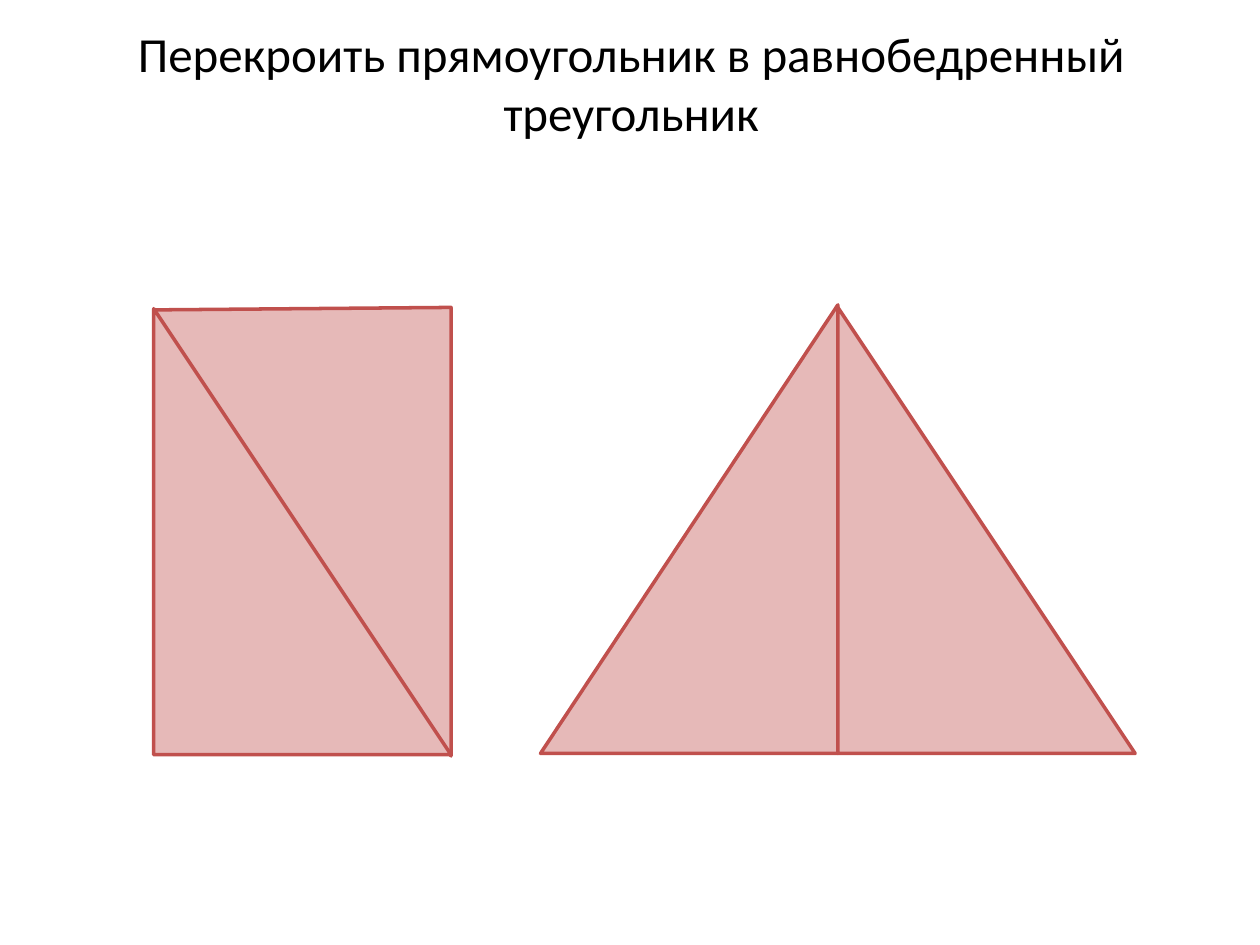
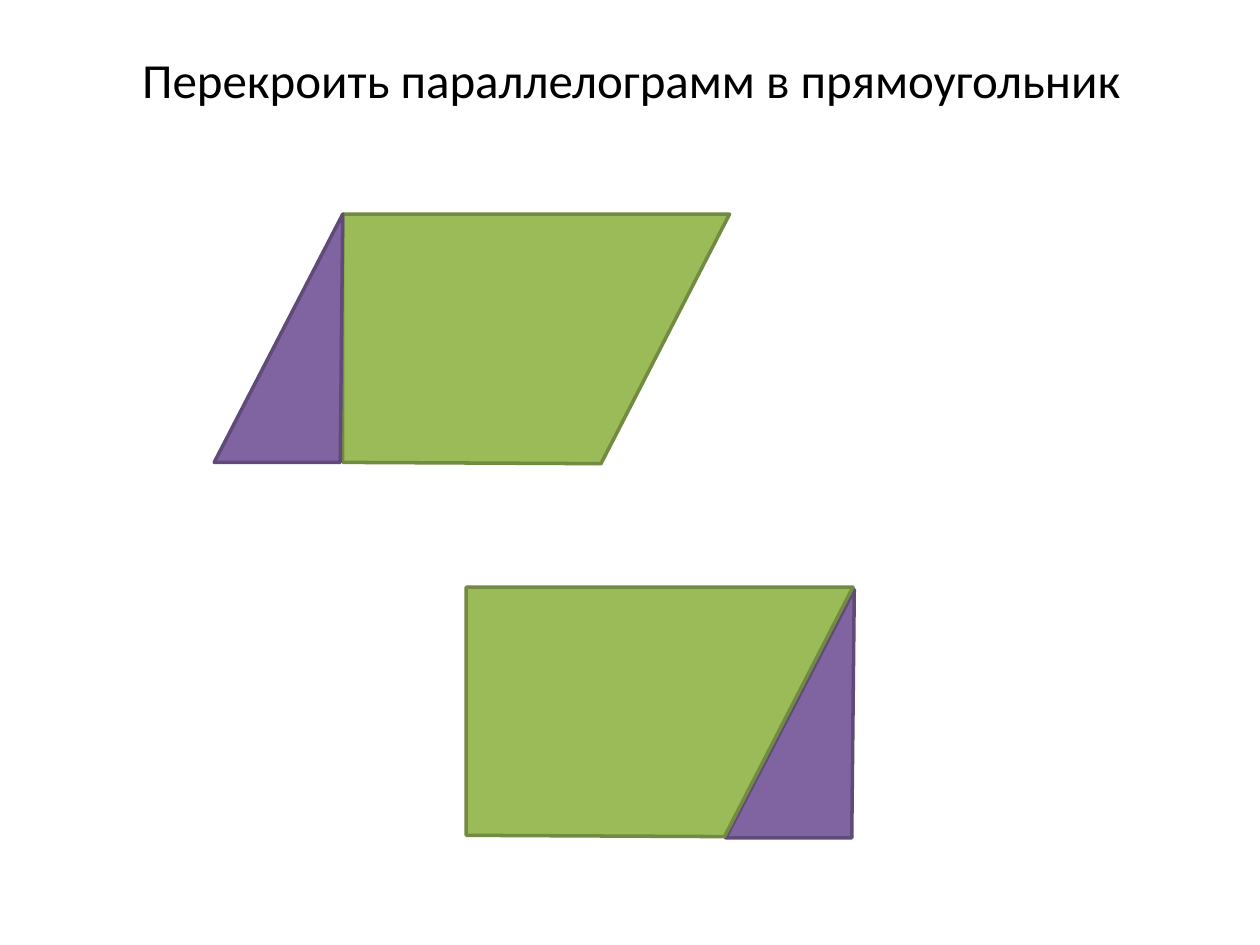
"""Build two slides on cutting and rearranging plane figures."""
from pptx import Presentation
from pptx.dml.color import RGBColor
from pptx.enum.shapes import MSO_SHAPE as Preset
from pptx.enum.text import MSO_ANCHOR as Anchor, PP_ALIGN as Align
from pptx.util import Inches, Pt

COLORS = {
    "text": "000000",
    "pink": "E6B9B8", "pink_line": "C0504D",
    "green": "9BBB59", "green_line": "738A42",
    "purple": "8064A2", "purple_line": "5F4A78",
}


def paint(shape, color):
    shape.shadow.inherit = False
    shape.fill.solid()
    shape.fill.fore_color.rgb = RGBColor.from_string(COLORS[color])
    shape.line.color.rgb = RGBColor.from_string(COLORS[color + "_line"])
    shape.line.width = Pt(2)


def add_piece(page, left, top, outline, color):
    points = [(Inches(left + x), Inches(top + y)) for x, y in outline]
    builder = page.shapes.build_freeform(*points[0], scale=1.0)
    builder.add_line_segments(points[1:], close=True)
    paint(builder.convert_to_shape(), color)


deck = Presentation()
deck.slide_width, deck.slide_height = Inches(10), Inches(7.5)

pages = []
for heading, title_top in [
    ("Перекроить прямоугольник в равнобедренный треугольник", 0.03),
    ("Перекроить параллелограмм в прямоугольник", 0),
]:
    page = deck.slides.add_slide(deck.slide_layouts[5])
    title = page.shapes.title
    title.left, title.top = Inches(0.51), Inches(title_top)
    title.width, title.height = Inches(9), Inches(1.25)
    title.text_frame.text = heading
    title.text_frame.vertical_anchor = Anchor.MIDDLE
    para = title.text_frame.paragraphs[0]
    para.alignment = Align.CENTER
    para.font.name, para.font.size = "Calibri", Pt(28)
    para.font.color.rgb = RGBColor.from_string(COLORS["text"])
    pages.append(page)

triangle_page, rectangle_page = pages

left_half = [(0, 3.56), (2.36, 0), (2.36, 3.56)]
upper_half = [(0, 0.02), (2.36, 0), (2.36, 3.56)]
for piece_left, piece_top, outline, right_left, right_top in [
    (4.29, 2.42, left_half, 6.65, 2.44),
    (1.22, 2.44, upper_half, 1.22, 2.45),
]:
    add_piece(triangle_page, piece_left, piece_top, outline, "pink")
    right_triangle = triangle_page.shapes.add_shape(
        Preset.RIGHT_TRIANGLE, Inches(right_left), Inches(right_top),
        Inches(2.36), Inches(3.54))
    paint(right_triangle, "pink")

trapezoid = [(0, 0), (3.07, 0), (2.05, 1.98), (0, 1.97)]
cut_triangle = [(0, 1.97), (1.02, 0), (1, 1.97)]
for left, top, outline, color in [
    (2.72, 1.7, trapezoid, "green"),
    (1.7, 1.7, cut_triangle, "purple"),
    (5.76, 4.68, cut_triangle, "purple"),
    (3.7, 4.66, trapezoid, "green"),
]:
    add_piece(rectangle_page, left, top, outline, color)

deck.save("out.pptx")
